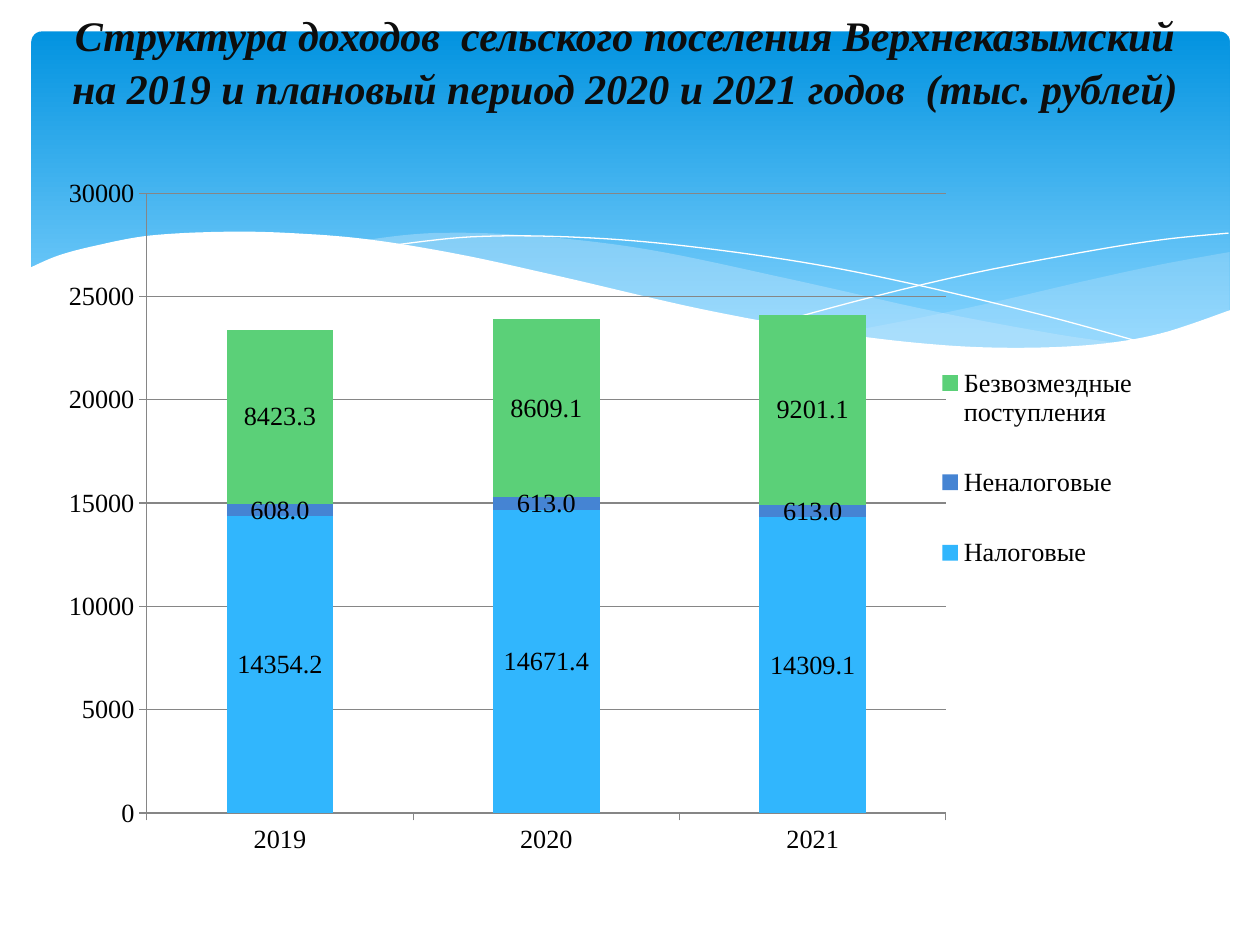
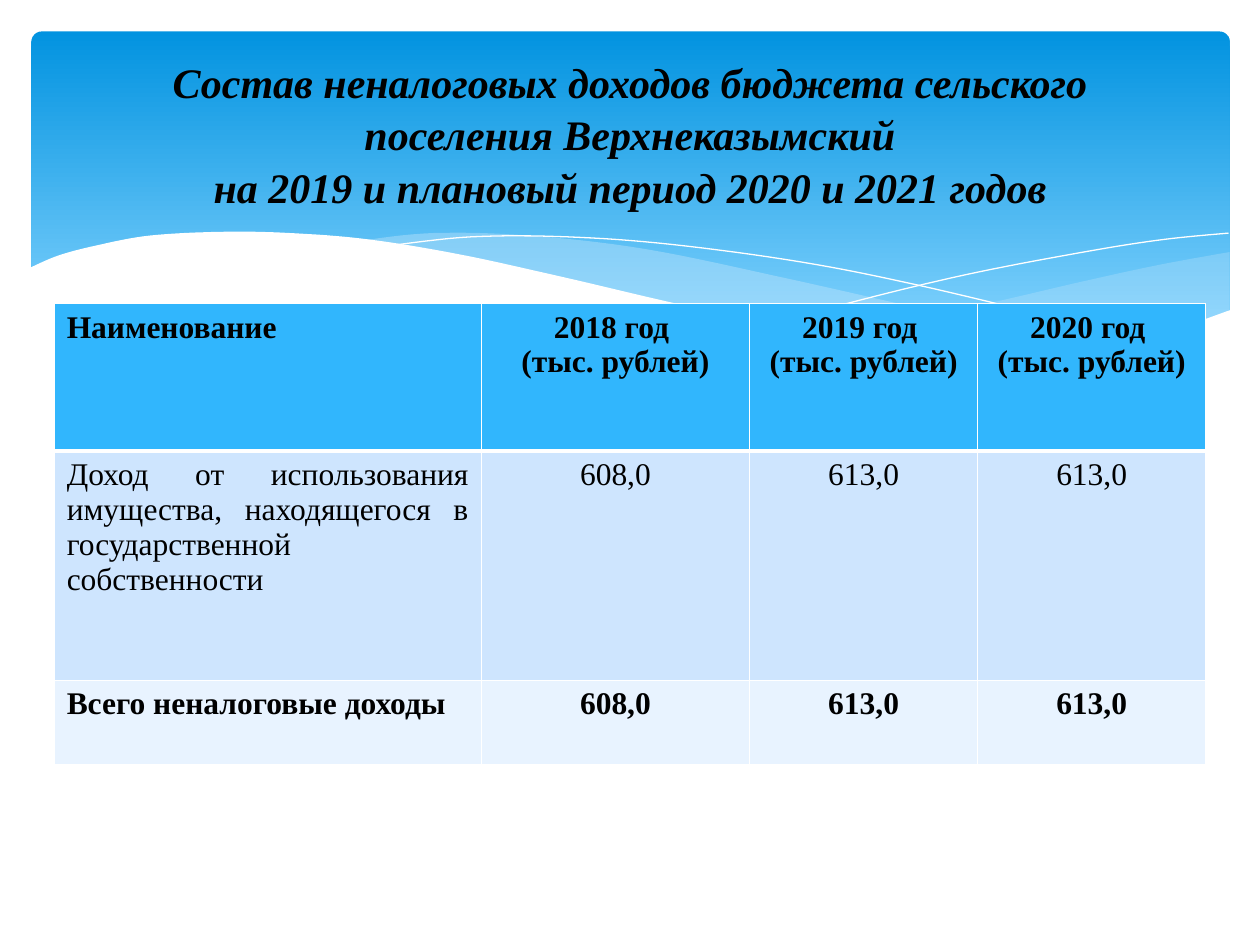
from lxml import etree
from pptx import Presentation
from pptx.chart.data import CategoryChartData
from pptx.dml.color import RGBColor
from pptx.enum.chart import XL_CHART_TYPE, XL_LABEL_POSITION, XL_LEGEND_POSITION, XL_TICK_MARK
from pptx.enum.shapes import MSO_SHAPE
from pptx.enum.text import MSO_ANCHOR, PP_ALIGN
from pptx.oxml import parse_xml
from pptx.oxml.ns import nsdecls, qn
from pptx.util import Inches, Pt

STACKED = XL_CHART_TYPE.COLUMN_STACKED
LABEL_CENTER = XL_LABEL_POSITION.CENTER
LEGEND_RIGHT = XL_LEGEND_POSITION.RIGHT
TICK_OUT = XL_TICK_MARK.OUTSIDE
ROUND_RECT = MSO_SHAPE.ROUNDED_RECTANGLE
MIDDLE = MSO_ANCHOR.MIDDLE
LEFT, CENTER, JUSTIFY = PP_ALIGN.LEFT, PP_ALIGN.CENTER, PP_ALIGN.JUSTIFY

WHITE = RGBColor(0xFF, 0xFF, 0xFF)
BLACK = RGBColor(0, 0, 0)
INK = RGBColor(0x0D, 0x0D, 0x0D)
GRAY = RGBColor(0x86, 0x86, 0x86)
DEEP_BLUE = RGBColor(0x02, 0x93, 0xE0)
SKY = RGBColor(0x83, 0xD3, 0xFE)
MIST = RGBColor(0xC6, 0xE7, 0xFC)
AZURE = RGBColor(0x31, 0xB6, 0xFD)
BLUE = RGBColor(0x45, 0x84, 0xD3)
GREEN = RGBColor(0x5B, 0xD0, 0x78)
ROW_DARK = RGBColor(0xCE, 0xE5, 0xFE)
ROW_LIGHT = RGBColor(0xE8, 0xF3, 0xFF)

FONT = "Times New Roman"
COLS, ROWS = 100, 75

SWELL_TOP = [(97.6, 20), (92.1, 21), (86.1, 22.3), (77.9, 24.2), (70.6, 25.7), (66.1, 26.5)]
SWELL_BOTTOM = [(66.1, 26.5), (73.2, 27.4), (80.3, 27.8), (87.2, 27.4), (92.8, 26.3), (97.6, 24.7)]
BAND_TOP = [(28.6, 19.1), (34.4, 18.5), (42, 18.7), (51.4, 19.8), (62.9, 22.2),
            (74.1, 24.7), (83.7, 26.5), (89.3, 27.3)]
BAND_BOTTOM = [(89.3, 27.3), (82.8, 27.8), (76.1, 27.7), (68, 26.8), (58.4, 25.2),
               (49.1, 23.2), (40.4, 21.1), (34.2, 19.9), (28.6, 19.1)]
FALLING_LINE = [(30.9, 19.5), (37.4, 18.8), (45, 18.8), (53.3, 19.4), (63.6, 20.8),
                (72.7, 22.6), (83.1, 25.1), (90.7, 27.2)]
RISING_LINE = [(61.3, 25.7), (69.5, 23.5), (77.6, 21.6), (86.6, 19.9), (92.4, 19), (97.5, 18.5)]
WHITE_EDGE = [(97.7, 24.6), (92, 26.5), (86.3, 27.4), (79.3, 27.6), (72.6, 27.2), (64.8, 26.2),
              (55.5, 24.5), (44.7, 22), (36.5, 20.2), (29.2, 19), (23, 18.5), (17.7, 18.4),
              (11.9, 18.7), (7.6, 19.5), (4.6, 20.3), (2.3, 21.3)]
WHITE_BASE = [(2.3, 32.9), (97.7, 32.9)]


def smooth(points, steps=8):
    padded = [points[0], *points, points[-1]]
    curve = [points[0]]
    for a, b, c, d in zip(padded, padded[1:], padded[2:], padded[3:]):
        for i in range(1, steps + 1):
            t = i / steps
            curve.append(tuple(
                (2 * q + (s - p) * t + (2 * p - 5 * q + 4 * s - u) * t ** 2
                 + (3 * q - p - 3 * s + u) * t ** 3) / 2
                for p, q, s, u in zip(a, b, c, d)))
    return curve


def set_format(obj, **values):
    for name, value in values.items():
        if name == "color":
            obj.color.rgb = value
        else:
            setattr(obj, name, value)


class Deck:
    def __init__(self):
        self.prs = Presentation()
        self.prs.slide_width, self.prs.slide_height = Inches(10), Inches(7.5)
        self.text = dict(name=FONT, size=Pt(18), color=BLACK)
        self.heading = dict(name=FONT, size=Pt(24), bold=True, italic=True)
        self.chart_text = dict(name=FONT, size=Pt(15), color=BLACK)

    def x(self, cols):
        return round(self.prs.slide_width * cols / COLS)

    def y(self, rows):
        return round(self.prs.slide_height * rows / ROWS)

    def box(self, left, top, width, height):
        return self.x(left), self.y(top), self.x(width), self.y(height)

    def slide(self):
        self.s = self.prs.slides.add_slide(self.prs.slide_layouts[6])
        self.banner()
        self.wave(smooth(SWELL_TOP) + smooth(SWELL_BOTTOM), MIST, 29)
        self.wave(smooth(BAND_TOP) + smooth(BAND_BOTTOM), MIST, 40)
        self.wave(smooth(FALLING_LINE))
        self.wave(smooth(RISING_LINE))
        self.wave(smooth(WHITE_EDGE) + WHITE_BASE, WHITE)

    def banner(self):
        sp = self.s.shapes.add_shape(ROUND_RECT, *self.box(2.5, 2.5, 95.1, 27))
        sp.shadow.inherit = False
        sp.adjustments[0] = 0.03
        sp.line.fill.background()
        sp.fill.gradient()
        sp.fill.gradient_angle = 270
        for stop, color, position in zip(sp.fill.gradient_stops, (DEEP_BLUE, SKY), (0, 0.9)):
            set_format(stop, color=color, position=position)

    def wave(self, points, fill=None, alpha=100):
        points = [(self.x(c), self.y(r)) for c, r in points]
        builder = self.s.shapes.build_freeform(*points[0])
        builder.add_line_segments(points[1:], close=fill is not None)
        sp = builder.convert_to_shape()
        sp.shadow.inherit = False
        if fill is None:
            sp.fill.background()
            set_format(sp.line, color=WHITE, width=Pt(0))
            return
        sp.line.fill.background()
        sp.fill.solid()
        sp.fill.fore_color.rgb = fill
        if alpha < 100:
            color = sp.fill._xPr.find(".//" + qn("a:srgbClr"))
            etree.SubElement(color, qn("a:alpha")).set("val", str(alpha * 1000))

    def title(self, text, box, color, bottom=0.5):
        tf = self.s.shapes.add_textbox(*self.box(*box)).text_frame
        set_format(tf, word_wrap=True, vertical_anchor=MIDDLE, margin_bottom=self.y(bottom))
        p = tf.paragraphs[0]
        set_format(p, text=text, alignment=CENTER, line_spacing=1.05)
        for r in p.runs:
            set_format(r.font, color=color, **self.heading)

    def layout(self, parent, tag, x, y, w, h, inner=False):
        old = parent.find(qn("c:layout"))
        if old is not None:
            parent.remove(old)
        target = '<c:layoutTarget val="inner"/>' if inner else ""
        modes = "".join(f'<c:{n}Mode val="edge"/>' for n in "xy")
        sizes = "".join(f'<c:{n} val="{v}"/>' for n, v in zip("xywh", (x, y, w, h)))
        node = parse_xml(f'<c:layout {nsdecls("c")}><c:manualLayout>{target}{modes}{sizes}'
                         '</c:manualLayout></c:layout>')
        if tag is None:
            parent.insert(0, node)
        else:
            parent.find(qn(tag)).addnext(node)

    def chart(self, box, categories, series):
        data = CategoryChartData(number_format="0.0")
        data.categories = categories
        for name, values, _ in series:
            data.add_series(name, values)
        chart = self.s.shapes.add_chart(STACKED, *self.box(*box), data).chart
        set_format(chart, has_title=False, has_legend=True)
        set_format(chart.font, **self.chart_text)
        set_format(chart.legend, position=LEGEND_RIGHT, include_in_layout=False)
        set_format(chart.legend.font, **self.chart_text)
        plot = chart.plots[0]
        set_format(plot, gap_width=150, overlap=100, vary_by_categories=False)
        for ser, (_, _, color) in zip(plot.series, series):
            ser.format.fill.solid()
            ser.format.fill.fore_color.rgb = color
            labels = ser.data_labels
            set_format(labels, show_value=True, number_format="0.0",
                       number_format_is_linked=False, position=LABEL_CENTER)
            set_format(labels.font, **self.chart_text)
        for axis in (chart.category_axis, chart.value_axis):
            axis.major_tick_mark = TICK_OUT
            set_format(axis.tick_labels.font, **self.chart_text)
            set_format(axis.format.line, color=GRAY, width=Pt(0.75))
        axis = chart.value_axis
        set_format(axis, minimum_scale=0, maximum_scale=30000, major_unit=5000,
                   has_major_gridlines=True)
        set_format(axis.tick_labels, number_format="0", number_format_is_linked=False)
        set_format(axis.major_gridlines.format.line, color=GRAY, width=Pt(0.75))
        root = chart._chartSpace
        area = root.find(".//" + qn("c:plotArea"))
        self.layout(area, None, 0.09, 0.04, 0.7, 0.88, inner=True)
        self.layout(root.find(".//" + qn("c:legend")), "c:legendPos", 0.77, 0.23, 0.2, 0.4)
        clear = f'<c:spPr {nsdecls("c", "a")}><a:noFill/><a:ln><a:noFill/></a:ln></c:spPr>'
        area.append(parse_xml(clear))
        root.find(qn("c:chart")).addnext(parse_xml(clear))

    def borders(self, cell, top, bottom):
        tcPr = cell._tc.get_or_add_tcPr()
        for i, (side, width) in enumerate(zip("LRTB", (1, 1, top, bottom))):
            tcPr.insert(i, parse_xml(
                f'<a:ln{side} {nsdecls("a")} w="{Pt(width)}"><a:solidFill>'
                f'<a:srgbClr val="{WHITE}"/></a:solidFill></a:ln{side}>'))

    def table(self, box, widths, heights, rows, fills, bold_rows, justified):
        table = self.s.shapes.add_table(len(rows), len(widths), *self.box(*box)).table
        for col, width in zip(table.columns, widths):
            col.width = self.x(width)
        for row, height in zip(table.rows, heights):
            row.height = self.y(height)
        for i, row in enumerate(rows):
            for j, text in enumerate(row):
                cell = table.cell(i, j)
                cell.text = text
                cell.fill.solid()
                cell.fill.fore_color.rgb = fills[i]
                self.borders(cell, 3 if i == 1 else 1, 3 if i == 0 else 1)
                first = JUSTIFY if i in justified else LEFT
                for p in cell.text_frame.paragraphs:
                    p.alignment = CENTER if j else first
                    for r in p.runs:
                        set_format(r.font, bold=i in bold_rows, **self.text)


def main():
    deck = Deck()

    deck.slide()
    deck.title("Структура доходов  сельского поселения Верхнеказымский "
               "на 2019 и плановый период 2020 и 2021 годов  (тыс. рублей)",
               (4.3, 2.1, 90.6, 9.4), INK, bottom=4.5)
    deck.chart((3.5, 13.1, 90.6, 55.9), ["2019", "2020", "2021"], [
        ("Налоговые", (14354.2, 14671.4, 14309.1), AZURE),
        ("Неналоговые", (608, 613, 613), BLUE),
        ("Безвозмездные поступления", (8423.3, 8609.1, 9201.1), GREEN),
    ])

    deck.slide()
    years = [f"{year} год \n(тыс. рублей)" for year in (2018, 2019, 2020)]
    totals = ["608,0", "613,0", "613,0"]
    deck.table((4.3, 24.1, 91.4, 36.6), (33.9, 21.3, 18.1, 18.1), (11.7, 18.2, 6.7), [
        ["Наименование", *years],
        ["Доход от использования имущества, находящегося в государственной собственности",
         *totals],
        ["Всего неналоговые доходы", *totals],
    ], (AZURE, ROW_DARK, ROW_LIGHT), bold_rows=(0, 2), justified=(1,))
    deck.title("Состав неналоговых доходов бюджета сельского поселения Верхнеказымский\v"
               "на 2019 и плановый период 2020 и 2021 годов", (5, 3.7, 90, 13.7), BLACK)

    deck.prs.save("out.pptx")


if __name__ == "__main__":
    main()
